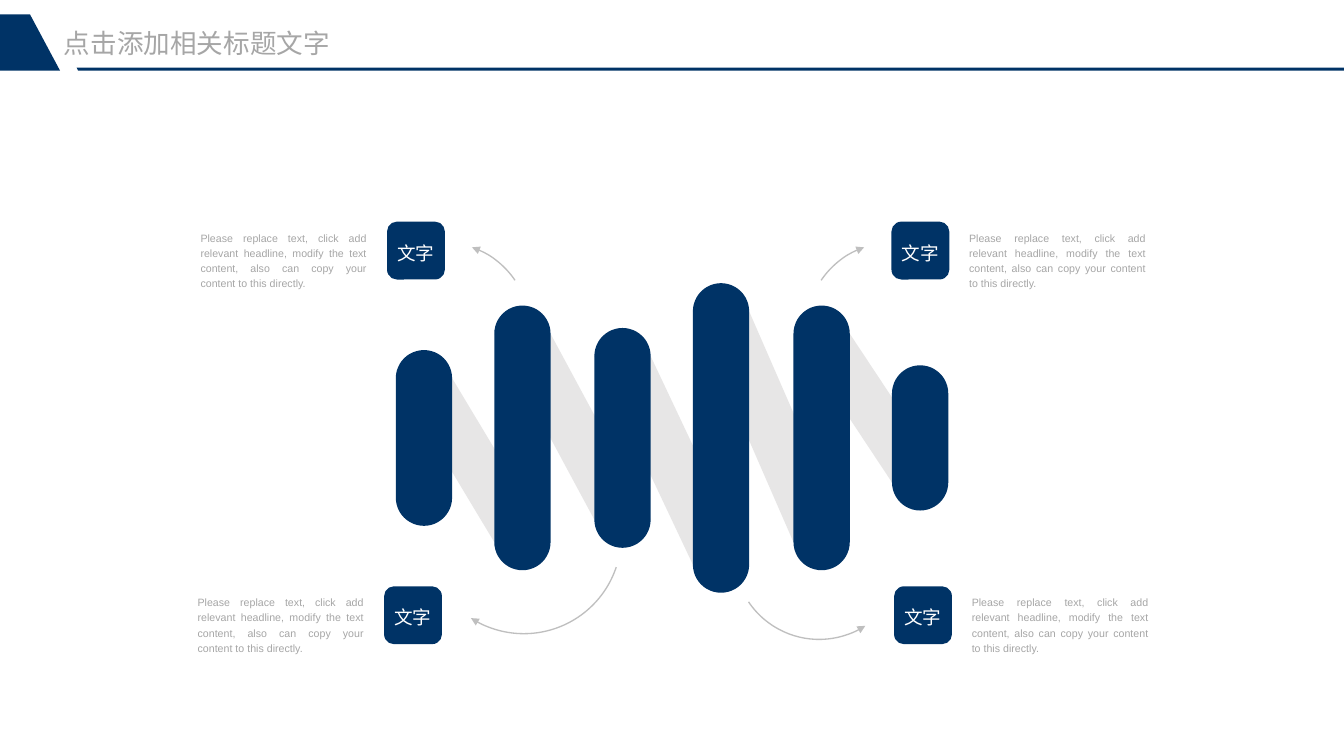
from lxml import etree
from pptx import Presentation
from pptx.dml.color import RGBColor
from pptx.enum import shapes as kinds, text as t
from pptx.oxml.ns import qn
from pptx.util import Pt

NAVY = RGBColor(0x00, 0x33, 0x66)
RIBBON_GRAY = RGBColor(0xE7, 0xE6, 0xE6)
ARROW_GRAY = RGBColor(0xBF, 0xBF, 0xBF)
TEXT_GRAY = RGBColor(0xA6, 0xA6, 0xA6)
WHITE = RGBColor(0xFF, 0xFF, 0xFF)

TITLE = "点击添加相关标题文字"
LABEL = "文字"
DETAIL = ("Please replace text, click add relevant headline, modify the text content, "
          "also can copy your content to this directly.")

# (centre x, height) of each bar
BARS = [(319.4, 132.4), (393.6, 199.4), (469, 165.6),
        (543.2, 233.2), (619, 199.4), (693.2, 109.4)]
BAR_WIDTH = 42.4
BARS_MIDDLE = 329.9

# (badge left, badge top, detail offset from badge, detail width)
CALLOUTS = [(671.6, 167, 58.5, 133.2), (673.6, 441.7, 58.5, 133.2),
            (291.6, 167, -140.5, 125.3), (289.4, 441.7, -140.5, 125.3)]
BADGE = 43.6

# (left, top, diameter, rotation, flips, start degrees, end degrees)
ARROWS = [(553, 353.5, 128.2, 249.6, ["flipH"], 283.57, 12.43),
          (607.7, 182.9, 128.2, 110.4, ["flipH", "flipV"], 283.57, 320.71),
          (321.1, 330.5, 146.9, 110.4, [], 268.12, 12.43),
          (270.7, 182.9, 128.2, 249.6, ["flipV"], 283.57, 320.71)]

SLIDE_WIDTH, SLIDE_HEIGHT = 1012.5, 569.5
HEADER_TAB = [(0, 10.8), (22.6, 10.8), (45.3, 53.3), (0, 53.3)]
HEADER_RULE = [(57.8, 51), (SLIDE_WIDTH, 51), (SLIDE_WIDTH, 53.3), (58.9, 53.3)]

prs = Presentation()
prs.slide_width, prs.slide_height = Pt(SLIDE_WIDTH), Pt(SLIDE_HEIGHT)
slide = prs.slides.add_slide(prs.slide_layouts[5])


def write(shape, text, size, color, align, anchor=t.MSO_ANCHOR.TOP, spacing=1.0):
    frame = shape.text_frame
    frame.word_wrap = True
    frame.auto_size = t.MSO_AUTO_SIZE.NONE
    frame.vertical_anchor = anchor
    frame.margin_left = frame.margin_top = frame.margin_right = frame.margin_bottom = 0
    paragraph = frame.paragraphs[0]
    paragraph.alignment = align
    paragraph.line_spacing = spacing
    run = paragraph.add_run()
    run.text = text
    run.font.name, run.font.size = "Arial", Pt(size)
    run.font.color.rgb = color


def paint(shape, color):
    shape.shadow.inherit = False
    shape.fill.solid()
    shape.fill.fore_color.rgb = color
    shape.line.fill.background()


def add_polygon(points, color):
    corners = [(Pt(x), Pt(y)) for x, y in points]
    builder = slide.shapes.build_freeform(*corners[0])
    builder.add_line_segments(corners[1:])
    paint(builder.convert_to_shape(), color)


def add_rounded(left, top, width, height, rounding):
    rounded = slide.shapes.add_shape(kinds.MSO_SHAPE.ROUNDED_RECTANGLE,
                                     Pt(left), Pt(top), Pt(width), Pt(height))
    rounded.adjustments[0] = rounding
    paint(rounded, NAVY)
    return rounded


def add_curved_arrow(left, top, diameter, rotation, flips, start, end):
    arc = slide.shapes.add_shape(kinds.MSO_SHAPE.ARC, Pt(left), Pt(top),
                                 Pt(diameter), Pt(diameter))
    arc.shadow.inherit = False
    arc.rotation = rotation
    # Angles are stored in 1/60000 degree, adjustments in 1/100000
    arc.adjustments[0], arc.adjustments[1] = start * 0.6, end * 0.6
    for flip in flips:
        arc._element.spPr.find(qn("a:xfrm")).set(flip, "1")
    arc.fill.background()
    arc.line.color.rgb = ARROW_GRAY
    arc.line.width = Pt(1)
    outline = arc._element.spPr.find(qn("a:ln"))
    etree.SubElement(outline, qn("a:tailEnd"), type="triangle")


# Each ribbon runs from the top cap of one bar to the bottom cap of the next
half = BAR_WIDTH / 2
for (x, height), (next_x, next_height) in zip(BARS, BARS[1:]):
    start_y = BARS_MIDDLE - height / 2 + half
    end_y = BARS_MIDDLE + next_height / 2 - half
    add_polygon([(x - half, start_y), (x + half, start_y),
                 (next_x + half, end_y), (next_x - half, end_y)], RIBBON_GRAY)
for x, height in BARS:
    add_rounded(x - half, BARS_MIDDLE - height / 2, BAR_WIDTH, height, 0.5)

for left, top, offset, width in CALLOUTS:
    detail = slide.shapes.add_textbox(Pt(left + offset), Pt(top + 5.5), Pt(width), Pt(45.4))
    write(detail, DETAIL, 8, TEXT_GRAY, t.PP_ALIGN.JUSTIFY, spacing=1.2)
    badge = add_rounded(left, top, BADGE, BADGE, 0.17)
    write(badge, LABEL, 14, WHITE, t.PP_ALIGN.CENTER, t.MSO_ANCHOR.MIDDLE, 1.2)

for arrow in ARROWS:
    add_curved_arrow(*arrow)

add_polygon(HEADER_RULE, NAVY)
add_polygon(HEADER_TAB, NAVY)
title = slide.shapes.title
title.left, title.top, title.width, title.height = Pt(48.2), Pt(20.2), Pt(241.2), Pt(24.5)
write(title, TITLE, 20, TEXT_GRAY, t.PP_ALIGN.LEFT, t.MSO_ANCHOR.MIDDLE)

prs.save("out.pptx")
